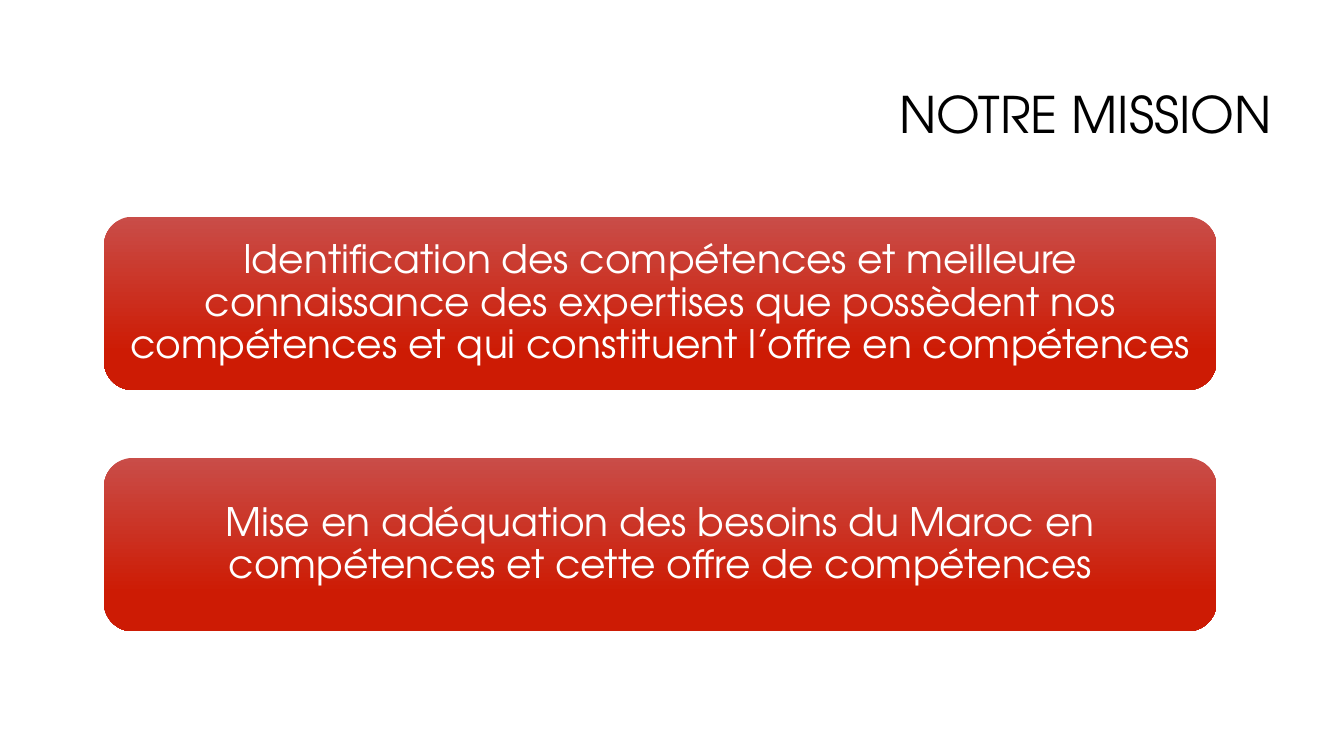
"""Build the mission slide: a title above two gradient statement boxes."""
from pptx import Presentation
from pptx.dml.color import RGBColor
from pptx.enum.shapes import MSO_SHAPE
from pptx.enum.text import MSO_ANCHOR, PP_ALIGN
from pptx.util import Cm, Pt

FONT = "TeX Gyre Adventor"
BLACK = RGBColor(0x00, 0x00, 0x00)
WHITE = RGBColor(0xFF, 0xFF, 0xFF)
LIGHT_RED = RGBColor(0xC9, 0x4D, 0x48)
DEEP_RED = RGBColor(0xCD, 0x1B, 0x04)
GRADIENT = [(0, LIGHT_RED), (0.78, DEEP_RED)]

MISSIONS = [
    "Identification des compétences et meilleure connaissance des expertises "
    "que possèdent nos compétences et qui constituent l’offre en compétences",
    "Mise en adéquation des besoins du Maroc en compétences et cette offre de compétences",
]
BOX_TOP, BOX_STEP = 5.46, 6.08


def format_text(frame, text, size, color, alignment):
    frame.text = text
    frame.word_wrap = True
    frame.vertical_anchor = MSO_ANCHOR.MIDDLE
    paragraph = frame.paragraphs[0]
    paragraph.alignment = alignment
    paragraph.line_spacing = 0.9
    paragraph.font.name = FONT
    paragraph.font.size = Pt(size)
    paragraph.font.color.rgb = color


presentation = Presentation()
presentation.slide_width = Cm(33.87)
presentation.slide_height = Cm(19.05)
slide = presentation.slides.add_slide(presentation.slide_layouts[5])

title = slide.shapes.title
title.left, title.top, title.width, title.height = Cm(3.35), Cm(0.89), Cm(28.96), Cm(4.11)
format_text(title.text_frame, "NOTRE MISSION", 36, BLACK, PP_ALIGN.RIGHT)

for index, mission in enumerate(MISSIONS):
    box = slide.shapes.add_shape(
        MSO_SHAPE.ROUNDED_RECTANGLE,
        Cm(2.62), Cm(BOX_TOP + index * BOX_STEP), Cm(28.04), Cm(4.37),
    )
    box.shadow.inherit = False
    box.line.fill.background()
    box.fill.gradient()
    box.fill.gradient_angle = 270
    for stop, (position, color) in zip(box.fill.gradient_stops, GRADIENT):
        stop.position = position
        stop.color.rgb = color
    frame = box.text_frame
    frame.margin_left = frame.margin_right = Cm(0.3)
    frame.margin_top = frame.margin_bottom = Cm(0.3)
    format_text(frame, mission, 28, WHITE, PP_ALIGN.CENTER)

presentation.save("out.pptx")
